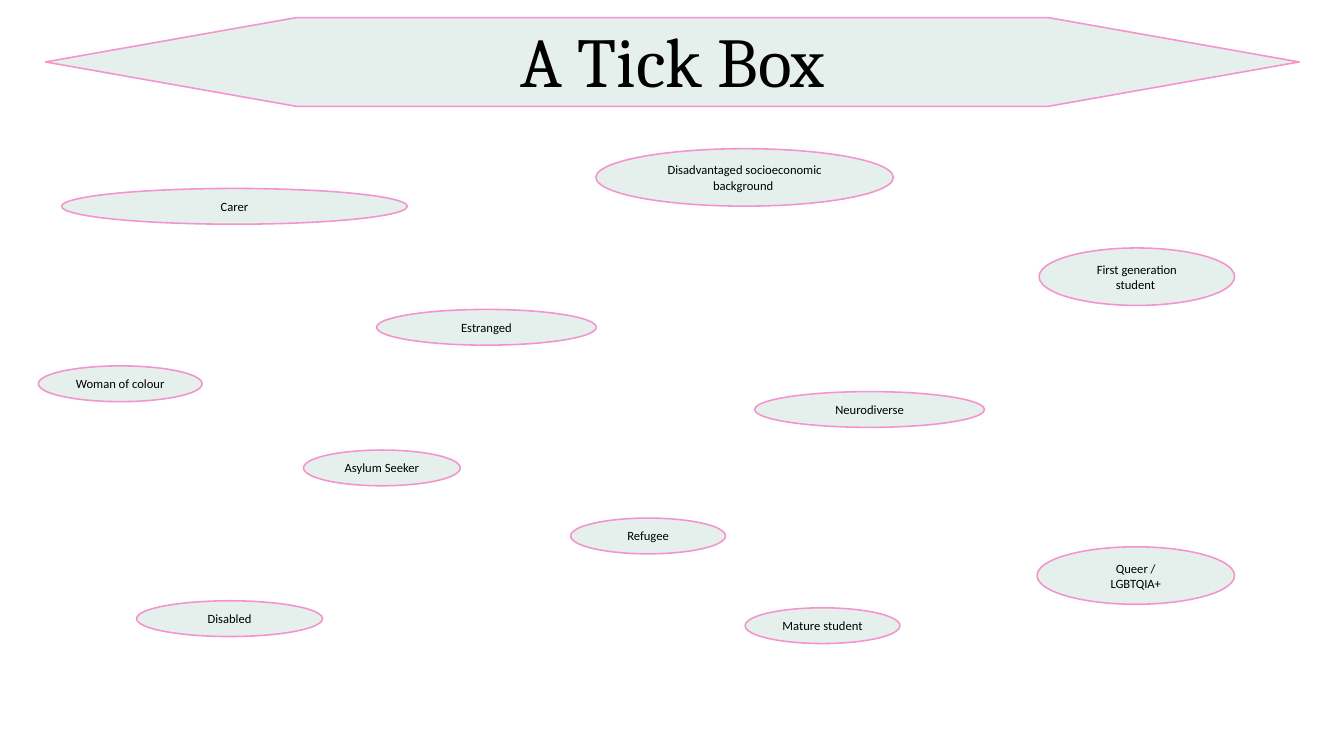
from pptx import Presentation
from pptx.dml.color import RGBColor
from pptx.enum.shapes import MSO_SHAPE as SHAPE
from pptx.enum.text import MSO_ANCHOR as ANCHOR, MSO_AUTO_SIZE as AUTO, PP_ALIGN as ALIGN
from pptx.util import Inches, Pt

prs = Presentation()
prs.slide_width, prs.slide_height = Inches(26.66), Inches(15)
s = prs.slides.add_slide(prs.slide_layouts[6])

# Lengths are percentages of the slide's width and height
COL, ROW = prs.slide_width / 100, prs.slide_height / 100
ONE_LINE, TWO_LINES = 4.73, 7.6
TITLE = {"name": "Cambria", "size": Pt(100)}
LABEL = {"name": "Calibri", "size": Pt(18)}


def rgb(value):
    return RGBColor.from_string(value)


def write(sp, lines, font, inset_x=0, inset_y=0):
    tf = sp.text_frame
    frame = {"word_wrap": True, "vertical_anchor": ANCHOR.MIDDLE,
             "auto_size": AUTO.SHAPE_TO_FIT_TEXT,
             "margin_left": Inches(inset_x), "margin_right": Inches(inset_x),
             "margin_top": Inches(inset_y), "margin_bottom": Inches(inset_y)}
    for key, value in frame.items():
        setattr(tf, key, value)
    tf.text = lines
    for p in tf.paragraphs:
        p.alignment = ALIGN.CENTER
        for r in p.runs:
            for key, value in font.items():
                setattr(r.font, key, value)
            r.font.color.rgb = rgb("000000")


# Banner, then the labels: left, top, width, height
shapes = [
    ("", 3.38, 2.33, 93.29, 11.73),
    ("Estranged", 28.02, 40.93, 16.35, ONE_LINE),
    ("Carer", 4.58, 24.93, 25.73, ONE_LINE),
    ("Disadvantaged socioeconomic background ", 44.34, 19.67, 22.13, TWO_LINES),
    ("First generation student ", 77.31, 32.8, 14.55, TWO_LINES),
    ("Woman of colour", 2.85, 48.4, 12.19, ONE_LINE),
    ("Asylum Seeker", 22.58, 59.53, 11.67, ONE_LINE),
    ("Neurodiverse", 56.15, 51.8, 17.1, ONE_LINE),
    ("Refugee", 42.46, 68.53, 11.52, ONE_LINE),
    ("Disabled", 10.16, 79.47, 13.84, ONE_LINE),
    ("Queer /\nLGBTQIA+", 77.16, 72.33, 14.7, TWO_LINES),
    ("Mature student", 55.44, 80.4, 11.52, ONE_LINE),
]
for label, x, y, w, h in shapes:
    kind = SHAPE.OVAL if label else SHAPE.FLOWCHART_PREPARATION
    sp = s.shapes.add_shape(kind, int(x * COL), int(y * ROW), int(w * COL), int(h * ROW))
    sp.shadow.inherit = False
    sp.fill.solid()
    sp.fill.fore_color.rgb = rgb("E5F0EC")
    sp.line.color.rgb = rgb("F494CE")
    sp.line.width = Pt(2.25)
    if label:
        write(sp, label, LABEL, 0.2, 0.1)

# Title over the banner
title = s.shapes.add_textbox(int(35.45 * COL), int(2.33 * ROW), int(29.18 * COL), int(11.2 * ROW))
write(title, "A Tick Box", TITLE)

prs.save("out.pptx")
